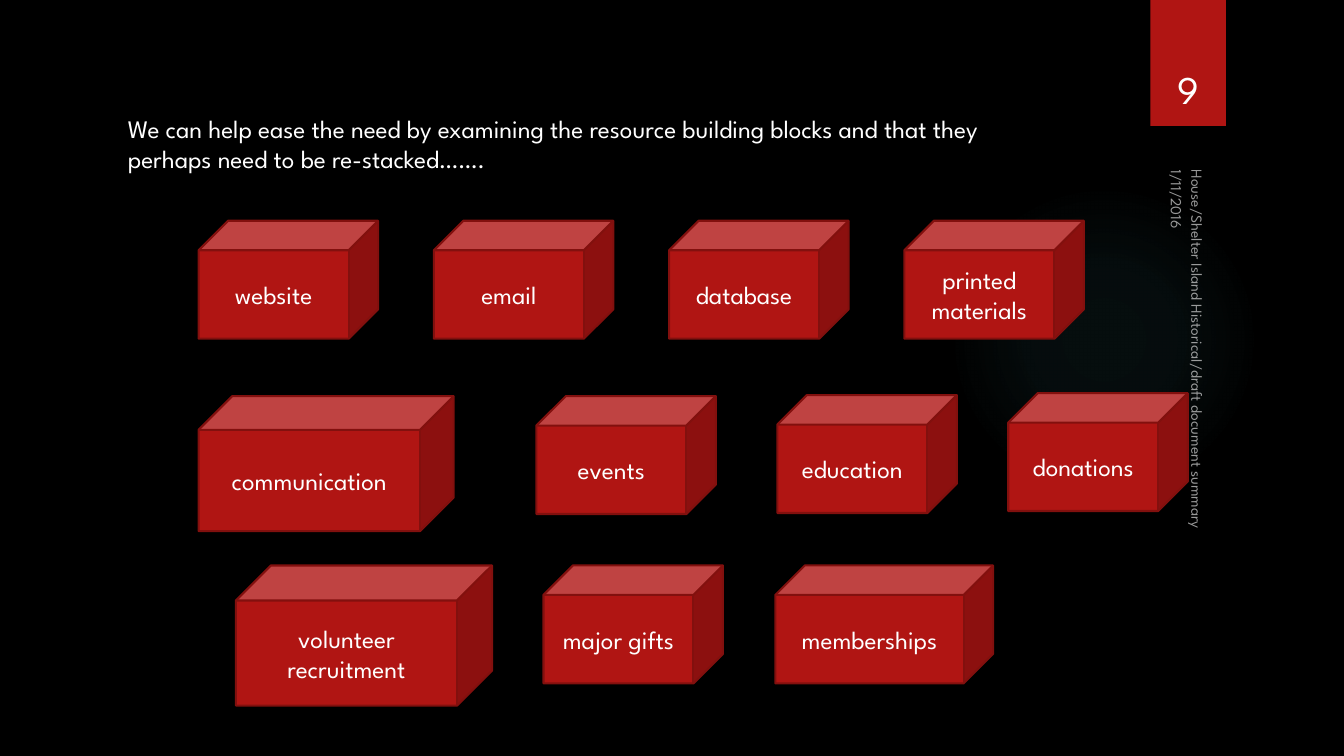
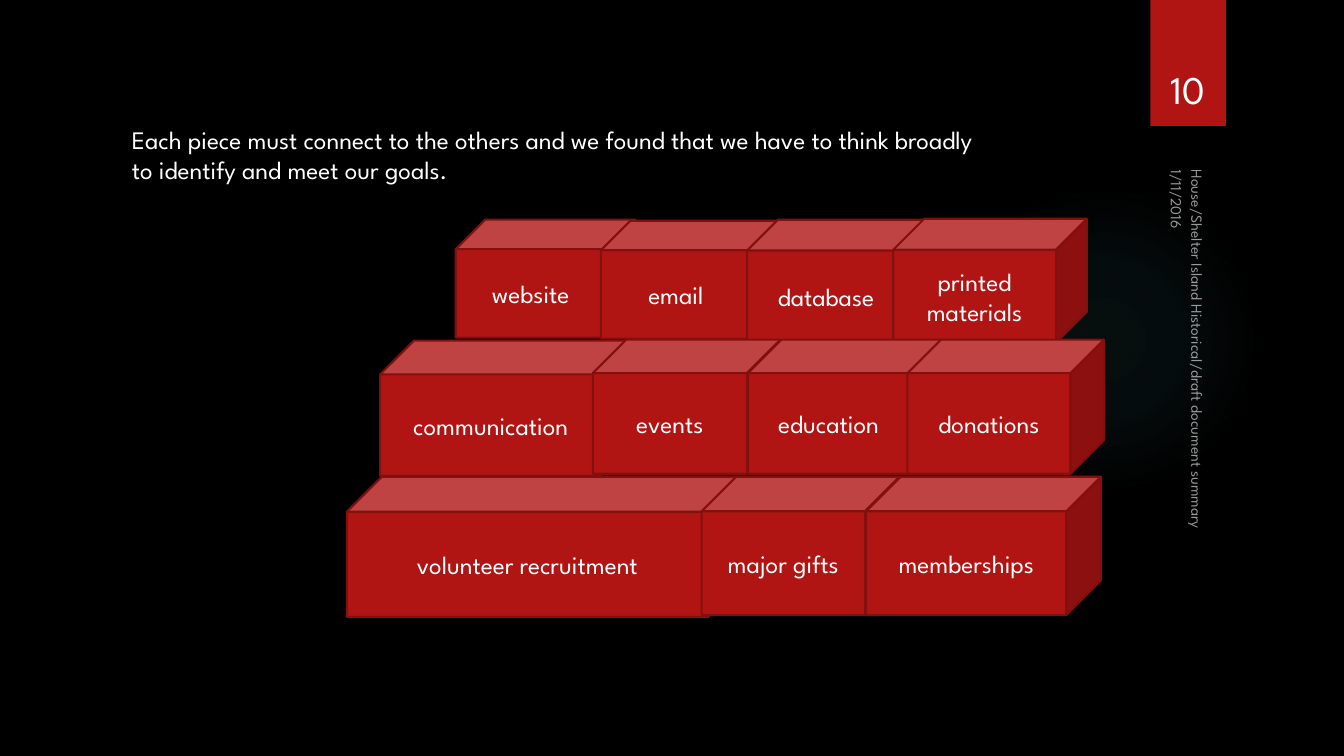
from typing import NamedTuple

from lxml.etree import SubElement
from pptx import Presentation
from pptx.dml.color import RGBColor
from pptx.enum.shapes import MSO_SHAPE
from pptx.enum.text import MSO_ANCHOR, PP_ALIGN
from pptx.oxml import parse_xml
from pptx.oxml.ns import nsdecls, qn
from pptx.util import Inches, Pt

COLORS = {
    "background": "000000",
    "red": "B01513",
    "outline": "82100E",
    "glow": "50B9C1",
    "text": "FFFFFF",
}
FONT = "League Spartan"
FIRST_NUMBER = 9
DATE = "1/11/2016"
FOOTER = "House/Shelter Island Historical/draft document summary"
GLOW_STOPS = [(0, 7), (36, 6), (69, 0)]  # position and opacity, in percent


class Block(NamedTuple):
    label: str
    left: float
    top: float
    width: float = 1.78
    height: float = 1.17


SCATTERED_BLOCKS = [
    Block(label, 1.97 + column * 7 / 3, 2.19)
    for column, label in enumerate(["website", "email", "database", "printed materials"])
] + [
    Block("communication", 1.97, 3.93, 2.53, 1.34),
    Block("events", 5.32, 3.93),
    Block("education", 7.71, 3.92),
    Block("donations", 10, 3.9),
    Block("volunteer recruitment", 2.34, 5.61, 2.54, 1.39),
    Block("major gifts", 5.39, 5.61),
    Block("memberships", 7.69, 5.61, 2.16),
]

STACKED_BLOCKS = [
    Block("website", 4.52, 2.18),
    Block("email", 5.96, 2.19),
    Block("database", 7.41, 2.18, 1.87, 1.22),
    Block("printed materials", 8.86, 2.17, 1.92, 1.23),
    Block("communication", 3.77, 3.38, 2.53, 1.34),
    Block("events", 5.88, 3.37, 1.86, 1.33),
    Block("education", 7.42, 3.37, 1.93, 1.33),
    Block("donations", 9, 3.37, 1.95, 1.33),
    Block("volunteer recruitment", 3.44, 4.73, 3.93, 1.39),
    Block("major gifts", 6.96, 4.73, 1.96, 1.37),
    Block("memberships", 8.59, 4.73, 2.33, 1.37),
]

SLIDES = [
    (
        "We can help ease the need by examining the resource building blocks "
        "and that they perhaps need to be re-stacked…….",
        (1.17, 1.07, 9.36, 0.71),
        SCATTERED_BLOCKS,
    ),
    (
        "Each piece must connect to the others and we found that we have to "
        "think broadly to identify and meet our goals.",
        (1.21, 1.18, 8.61, 0.71),
        STACKED_BLOCKS,
    ),
]


def color(name):
    return RGBColor.from_string(COLORS[name])


def set_text(shape, text, size=18, align=PP_ALIGN.LEFT, anchor=MSO_ANCHOR.TOP):
    frame = shape.text_frame
    frame.word_wrap = True
    frame.vertical_anchor = anchor
    paragraph = frame.paragraphs[0]
    paragraph.alignment = align
    run = paragraph.add_run()
    run.text = text
    for name, value in {"name": FONT, "size": Pt(size)}.items():
        setattr(run.font, name, value)
    run.font.color.rgb = color("text")
    return run


def add_text(slide, box, text, **style):
    shape = slide.shapes.add_textbox(*map(Inches, box))
    return shape, set_text(shape, text, **style)


def add_filled_shape(slide, kind, box, line=None):
    shape = slide.shapes.add_shape(kind, *map(Inches, box))
    shape.shadow.inherit = False
    shape.fill.solid()
    shape.fill.fore_color.rgb = color("red")
    if line:
        shape.line.color.rgb = color(line)
        shape.line.width = Pt(1.5)
    else:
        shape.line.fill.background()
    return shape


def add_glow(slide):
    """Add a faint disc that fades out from its centre."""
    disc = add_filled_shape(slide, MSO_SHAPE.OVAL, (9.41, 1.83, 3.08, 3.08))
    stops = "".join(
        f'<a:gs pos="{position * 1000}"><a:srgbClr val="{COLORS["glow"]}">'
        f'<a:alpha val="{opacity * 1000}"/></a:srgbClr></a:gs>'
        for position, opacity in GLOW_STOPS
    )
    gradient = parse_xml(
        f'<a:gradFill {nsdecls("a")}><a:gsLst>{stops}</a:gsLst><a:path path="circle">'
        '<a:fillToRect l="50000" t="50000" r="50000" b="50000"/></a:path></a:gradFill>'
    )
    properties = disc.element.spPr
    properties.replace(properties.find(qn("a:solidFill")), gradient)


def add_side_text(slide, box, text, anchor=MSO_ANCHOR.TOP):
    """Add translucent small print that reads downwards."""
    shape, run = add_text(slide, box, text, size=11, anchor=anchor)
    shape.rotation = 90
    text_color = run.font.fill._xPr.find(".//" + qn("a:srgbClr"))
    SubElement(text_color, qn("a:alpha"), val="60000")


def add_frame(slide, number):
    """Add the glow and the numbered tab that every slide carries."""
    add_glow(slide)
    add_filled_shape(slide, MSO_SHAPE.RECTANGLE, (11.41, 0, 0.75, 1.25))
    add_text(slide, (11.32, 0.32, 0.92, 0.84), str(number), size=28,
             align=PP_ALIGN.CENTER, anchor=MSO_ANCHOR.BOTTOM)


def add_footer(slide):
    add_side_text(slide, (11.11, 1.96, 1.08, 0.33), DATE)
    add_side_text(slide, (9.79, 3.53, 4.22, 0.33), FOOTER, MSO_ANCHOR.BOTTOM)


def add_block(slide, block):
    cube = add_filled_shape(slide, MSO_SHAPE.CUBE, block[1:], line="outline")
    set_text(cube, block.label, align=PP_ALIGN.CENTER, anchor=MSO_ANCHOR.MIDDLE)


def main():
    presentation = Presentation()
    presentation.slide_width = Inches(13.33)
    presentation.slide_height = Inches(7.5)
    background = presentation.slide_master.background.fill
    background.solid()
    background.fore_color.rgb = color("background")
    blank = presentation.slide_layouts[6]

    for number, (message, box, blocks) in enumerate(SLIDES, FIRST_NUMBER):
        slide = presentation.slides.add_slide(blank)
        add_frame(slide, number)
        add_text(slide, box, message)
        for block in blocks:
            add_block(slide, block)
        add_footer(slide)

    presentation.save("out.pptx")


if __name__ == "__main__":
    main()
